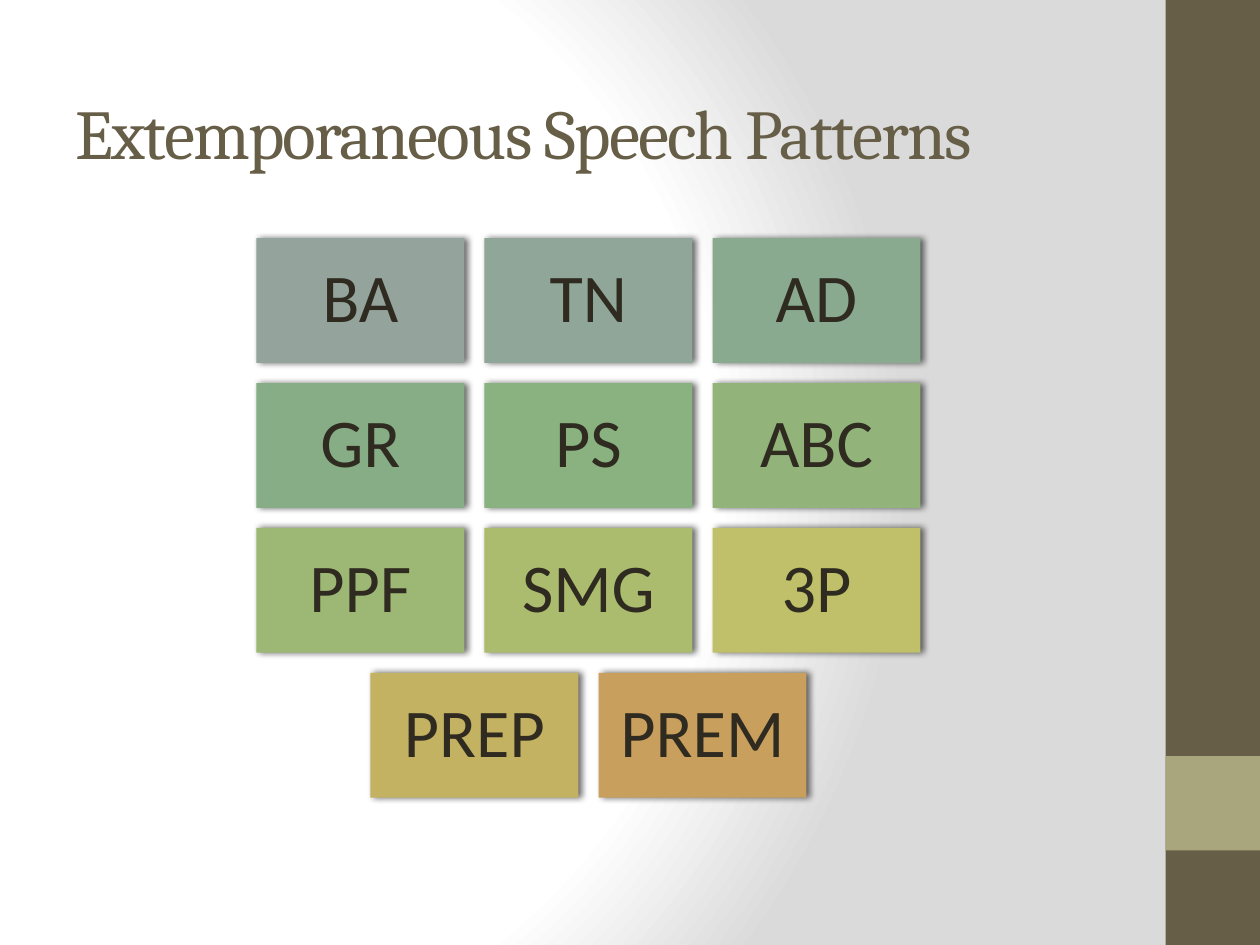
from pptx import Presentation
from pptx.dml.color import RGBColor
from pptx.enum.shapes import MSO_SHAPE
from pptx.enum.text import MSO_ANCHOR, MSO_AUTO_SIZE, PP_ALIGN
from pptx.oxml import parse_xml
from pptx.oxml.ns import nsdecls
from pptx.util import Inches, Pt


def color(value):
    return RGBColor.from_string(value)


def add_block(left, top, width, height, fill):
    shape = slide.shapes.add_shape(
        MSO_SHAPE.RECTANGLE, Inches(left), Inches(top), Inches(width), Inches(height))
    shape.shadow.inherit = False
    shape.fill.solid()
    shape.fill.fore_color.rgb = color(fill)
    shape.line.fill.background()
    return shape


presentation = Presentation()
WIDTH, HEIGHT = 10, 7.5
presentation.slide_width = Inches(WIDTH)
presentation.slide_height = Inches(HEIGHT)
slide = presentation.slides.add_slide(presentation.slide_layouts[5])

# Background: white glow fading to grey
stops = "".join(
    f'<a:gs pos="{share * 1000}"><a:srgbClr val="{value}"/></a:gs>'
    for share, value in [(0, "FFFFFF"), (75, "FFFFFF"), (100, "DADADA")])
slide.element.cSld.insert(0, parse_xml(
    f'<p:bg {nsdecls("p", "a")}><p:bgPr><a:gradFill rotWithShape="1">'
    f'<a:gsLst>{stops}</a:gsLst><a:path path="circle">'
    '<a:fillToRect l="20000" t="50000" r="100000" b="50000"/></a:path>'
    '</a:gradFill><a:effectLst/></p:bgPr></p:bg>'))

# Side band with accent square
BAND = 0.075 * WIDTH
add_block(WIDTH - BAND, 0, BAND, HEIGHT, "675E47")
add_block(WIDTH - BAND, 0.8 * HEIGHT, BAND, BAND, "A9A57C")

# Title
title = slide.shapes.title
title.left, title.top = Inches(0.5), Inches(0.42)
title.width, title.height = Inches(8.33), Inches(1.25)
title.text_frame.word_wrap = True
title.text_frame.auto_size = MSO_AUTO_SIZE.NONE
title.text_frame.vertical_anchor = MSO_ANCHOR.MIDDLE
paragraph = title.text_frame.paragraphs[0]
paragraph.alignment = PP_ALIGN.LEFT
run = paragraph.add_run()
run.text = "Extemporaneous Speech Patterns"
run.font.name = "Cambria"
run.font.size = Pt(40)
run.font.color.rgb = color("675E47")
run.font._element.set("spc", "-100")

# Tiles: rows centred on one axis
rows = [
    [("BA", "95A39D"), ("TN", "90A698"), ("AD", "8AAA90")],
    [("GR", "86AD85"), ("PS", "8AB180"), ("ABC", "92B47A")],
    [("PPF", "9DB874"), ("SMG", "ACBC6F"), ("3P", "BFC069")],
    [("PREP", "C4B263"), ("PREM", "C89F5D")],
]
TILE_WIDTH, TILE_HEIGHT, GAP = 1.65, 0.99, 0.16
CENTER, TOP, INSET = 4.67, 1.89, Inches(0.16)

for row_index, row in enumerate(rows):
    row_width = len(row) * (TILE_WIDTH + GAP) - GAP
    top = TOP + row_index * (TILE_HEIGHT + GAP)
    for column, (label, fill) in enumerate(row):
        left = CENTER - row_width / 2 + column * (TILE_WIDTH + GAP)
        tile = add_block(left, top, TILE_WIDTH, TILE_HEIGHT, fill)
        effects = tile._element.spPr.find(
            "{http://schemas.openxmlformats.org/drawingml/2006/main}effectLst")
        effects.append(parse_xml(
            f'<a:outerShdw {nsdecls("a")} blurRad="{Pt(4)}" dist="{Pt(2)}" dir="0" '
            'rotWithShape="0"><a:srgbClr val="000000"><a:alpha val="60000"/>'
            '</a:srgbClr></a:outerShdw>'))
        frame = tile.text_frame
        frame.word_wrap = True
        frame.vertical_anchor = MSO_ANCHOR.MIDDLE
        frame.margin_left = frame.margin_right = INSET
        frame.margin_top = frame.margin_bottom = INSET
        paragraph = frame.paragraphs[0]
        paragraph.alignment = PP_ALIGN.CENTER
        paragraph.line_spacing = 0.9
        run = paragraph.add_run()
        run.text = label
        run.font.name = "Calibri"
        run.font.size = Pt(39)
        run.font.color.rgb = color("2F2B20")

presentation.save("out.pptx")
